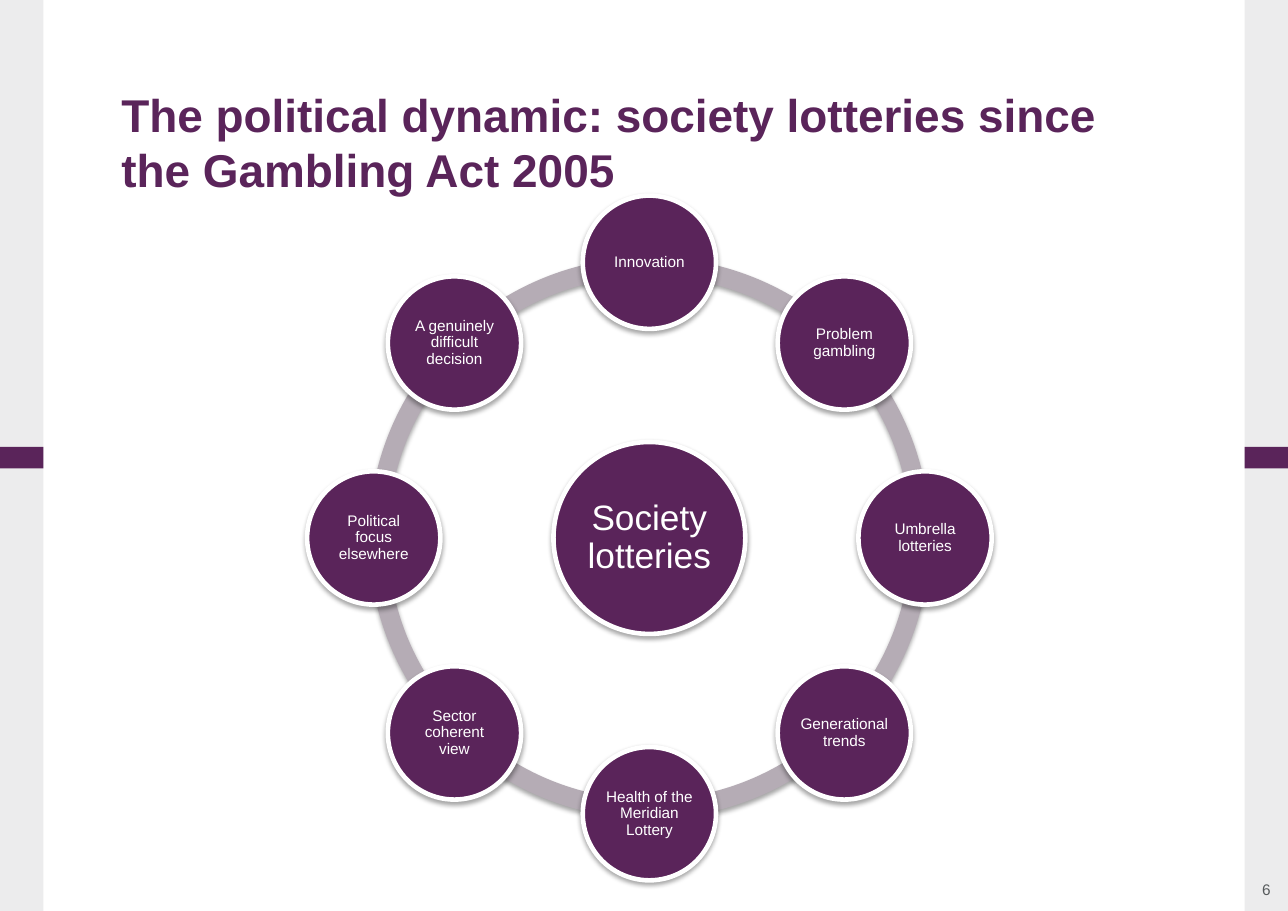
"""Build the slide on the political dynamic of society lotteries."""
from math import cos, radians, sin

from lxml import etree
from pptx import Presentation
from pptx.dml.color import RGBColor
from pptx.enum.shapes import MSO_SHAPE as Preset
from pptx.enum.text import MSO_ANCHOR as Anchor, MSO_AUTO_SIZE as AutoSize, PP_ALIGN as Align
from pptx.oxml.ns import qn
from pptx.util import Cm, Pt

TITLE = "The political dynamic: society lotteries since the Gambling Act 2005"
HUB = "Society lotteries"
FACTORS = [
    "Innovation",
    "Problem gambling",
    "Umbrella lotteries",
    "Generational trends",
    "Health of the Meridian Lottery",
    "Sector coherent view",
    "Political focus elsewhere",
    "A genuinely difficult decision",
]
PAGE_NUMBER = "6"
COLOURS = {"plum": "5A245A", "ring": "B5ACB5", "grey": "565A5C", "white": "FFFFFF"}
FONT = "Arial"

WIDTH, HEIGHT = 29.67, 20.98
BAND_WIDTH, MARK_TOP, MARK_HEIGHT = 1.0, 10.29, 0.5
CENTRE_X, CENTRE_Y = 14.96, 12.39
RING_SIZE, ORBIT_RADIUS = 12.93, 6.35
HUB_SIZE, FACTOR_SIZE = 4.42, 3.07
RING_THICKNESS = 0.034
ADJUSTMENT_PER_DEGREE = 0.6


def colour(name):
    return RGBColor.from_string(COLOURS[name])


def add_filled(slide, preset, left, top, width, height, fill):
    shape = slide.shapes.add_shape(preset, Cm(left), Cm(top), Cm(width), Cm(height))
    shape.shadow.inherit = False
    shape.fill.solid()
    shape.fill.fore_color.rgb = colour(fill)
    shape.line.fill.background()
    return shape


def add_centred(slide, preset, x, y, size, fill):
    return add_filled(slide, preset, x - size / 2, y - size / 2, size, size, fill)


def set_opacity(colour_element, percent):
    etree.SubElement(colour_element, qn("a:alpha"), val=str(percent * 1000))


def add_soft_shadow(shape):
    effects = shape._element.spPr.find(qn("a:effectLst"))
    shadow = etree.SubElement(effects, qn("a:outerShdw"), blurRad=str(Pt(3)),
                              dist=str(Pt(1.8)), dir="5400000", rotWithShape="0")
    set_opacity(etree.SubElement(shadow, qn("a:srgbClr"), val="000000"), 35)


def write(shape, text, size, fill, margin, spacing=None):
    frame = shape.text_frame
    frame.word_wrap = True
    frame.vertical_anchor = Anchor.MIDDLE
    frame.margin_left = frame.margin_right = Cm(margin)
    frame.margin_top = frame.margin_bottom = Cm(margin)
    paragraph = frame.paragraphs[0]
    paragraph.alignment = Align.CENTER
    paragraph.line_spacing = spacing
    add_run(paragraph, text, size, fill)


def add_run(paragraph, text, size, fill, bold=False):
    run = paragraph.add_run()
    run.text = text
    run.font.name = FONT
    run.font.size = Pt(size)
    run.font.bold = bold
    run.font.color.rgb = colour(fill)


def add_side_bands(slide):
    for left in (0, WIDTH - BAND_WIDTH):
        band = add_filled(slide, Preset.RECTANGLE, left, 0, BAND_WIDTH, HEIGHT, "grey")
        set_opacity(band._element.spPr.find(qn("a:solidFill"))[0], 11)
        add_filled(slide, Preset.RECTANGLE, left, MARK_TOP, BAND_WIDTH, MARK_HEIGHT, "plum")
    number = slide.shapes.add_textbox(Cm(WIDTH - BAND_WIDTH), Cm(HEIGHT - BAND_WIDTH),
                                      Cm(BAND_WIDTH), Cm(BAND_WIDTH))
    write(number, PAGE_NUMBER, 10, "grey", 0.13)


def add_title(slide):
    title = slide.shapes.title
    title.left, title.top, title.width, title.height = Cm(2.54), Cm(1.99), Cm(24.82), Cm(2.6)
    frame = title.text_frame
    frame.auto_size = AutoSize.NONE
    frame.word_wrap = True
    frame.vertical_anchor = Anchor.TOP
    frame.margin_top = 0
    paragraph = frame.paragraphs[0]
    paragraph.alignment = Align.LEFT
    paragraph.line_spacing = 1.0
    add_run(paragraph, TITLE, 30, "plum", bold=True)


def add_ring(slide, step):
    for index in range(len(FACTORS)):
        arc = add_centred(slide, Preset.BLOCK_ARC, CENTRE_X, CENTRE_Y, RING_SIZE, "ring")
        start, end = index * step, (index + 1) * step % 360
        arc.adjustments[0] = start * ADJUSTMENT_PER_DEGREE
        arc.adjustments[1] = end * ADJUSTMENT_PER_DEGREE
        arc.adjustments[2] = RING_THICKNESS
        add_soft_shadow(arc)


def add_circle(slide, x, y, size, text, text_size, margin):
    circle = add_centred(slide, Preset.OVAL, x, y, size, "plum")
    circle.line.color.rgb = colour("white")
    circle.line.width = Pt(3)
    add_soft_shadow(circle)
    write(circle, text, text_size, "white", margin, spacing=0.9)


def main():
    presentation = Presentation()
    presentation.slide_width, presentation.slide_height = Cm(WIDTH), Cm(HEIGHT)
    slide = presentation.slides.add_slide(presentation.slide_layouts[5])
    add_side_bands(slide)
    add_title(slide)
    step = 360 / len(FACTORS)
    add_ring(slide, step)
    add_circle(slide, CENTRE_X, CENTRE_Y, HUB_SIZE, HUB, 23, 0.08)
    for index, factor in enumerate(FACTORS):
        angle = radians(index * step - 90)
        x = CENTRE_X + ORBIT_RADIUS * cos(angle)
        y = CENTRE_Y + ORBIT_RADIUS * sin(angle)
        add_circle(slide, x, y, FACTOR_SIZE, factor, 10, 0.03)
    presentation.save("out.pptx")


if __name__ == "__main__":
    main()
